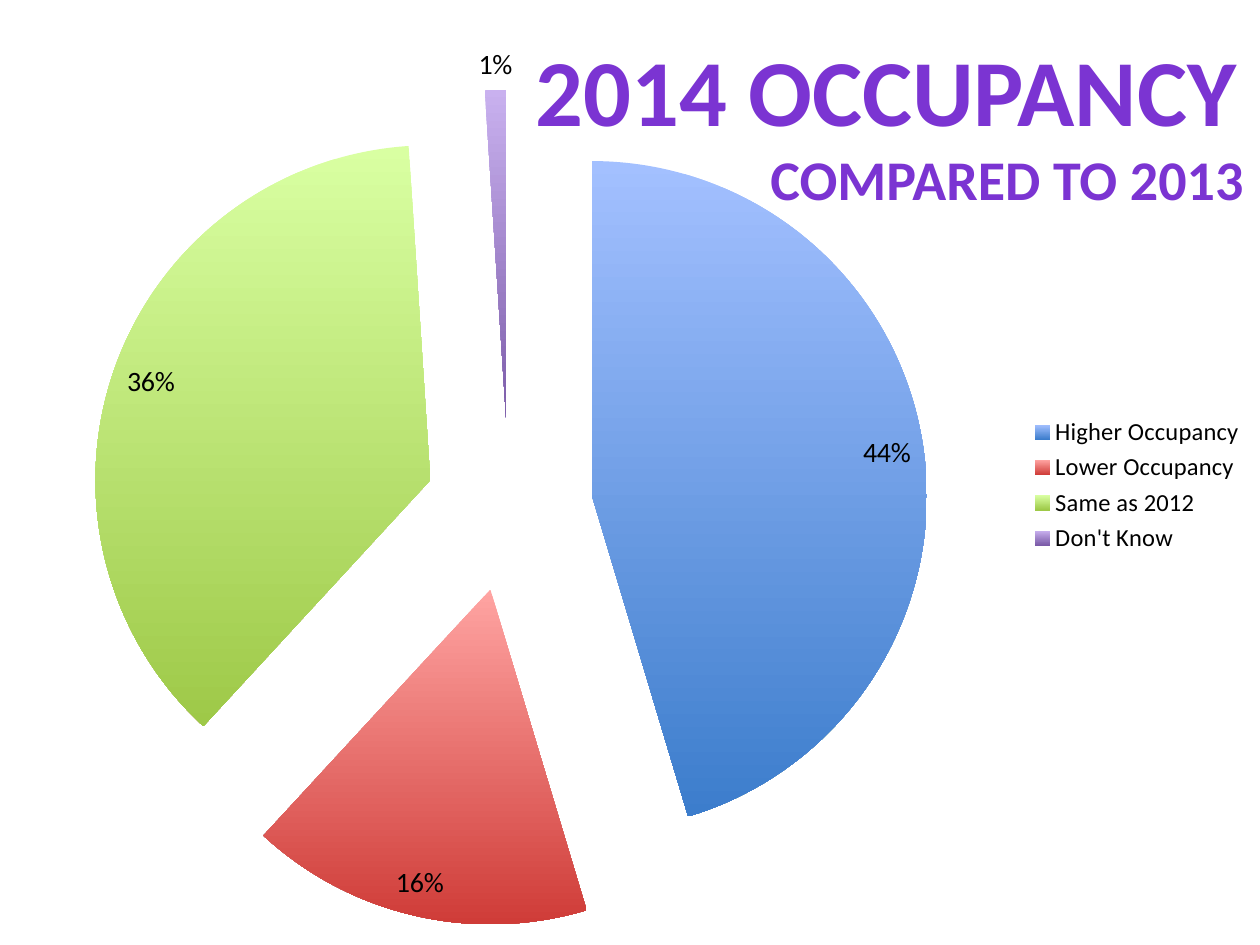
import pptx
import pptx.chart.data
import pptx.dml.color
import pptx.enum.chart
import pptx.enum.text
import pptx.oxml
import pptx.oxml.ns
import pptx.util

Pt = pptx.util.Pt
ALIGN = pptx.enum.text.PP_ALIGN
CHART = pptx.enum.chart

COLORS = {"title": "7B34D2", "text": "000000"}
# name, share, top and bottom colour of the slice
SLICES = [
    ("Higher Occupancy", 0.44, "A3C0FF", "3C7DCC"),
    ("Lower Occupancy", 0.16, "FFA4A2", "CF3C38"),
    ("Same as 2012", 0.36, "D9FFA2", "9EC948"),
    ("Don't Know", 0.01, "C9B1EF", "7B5BA8"),
]


def rgb(code):
    return pptx.dml.color.RGBColor.from_string(code)


def node(tag, inner="", val=None):
    attr = "" if val is None else f' val="{val}"'
    space = pptx.oxml.ns.nsdecls("c")
    return pptx.oxml.parse_xml(f"<c:{tag} {space}{attr}>{inner}</c:{tag}>")


class Deck:
    """Holds the style and the current slide."""

    def __init__(self, font="Calibri"):
        self.font = font
        self.show = pptx.Presentation()
        self.show.slide_width, self.show.slide_height = Pt(720), Pt(540)
        self.slide = self.show.slides.add_slide(self.show.slide_layouts[5])

    def style(self, font, size, color, bold=False):
        font.name, font.size, font.bold = self.font, Pt(size), bold
        font.color.rgb = rgb(color)

    def title(self, box, lines):
        shape = self.slide.shapes.title
        shape.left, shape.top, shape.width, shape.height = map(Pt, box)
        frame = shape.text_frame
        frame.word_wrap = True
        frame.auto_size = pptx.enum.text.MSO_AUTO_SIZE.NONE
        frame.vertical_anchor = pptx.enum.text.MSO_ANCHOR.TOP
        for i, (text, size, align) in enumerate(lines):
            para = frame.add_paragraph() if i else frame.paragraphs[0]
            para.alignment = align
            run = para.add_run()
            run.text = text
            self.style(run.font, size, COLORS["title"], True)

    def pie(self, box, slices, plot, explode):
        """Draw a pie; plot is its area as fractions of the chart."""
        data = pptx.chart.data.CategoryChartData(number_format="0%")
        data.categories = [part[0] for part in slices]
        data.add_series("Series 1", [part[1] for part in slices])
        chart = self.slide.shapes.add_chart(
            CHART.XL_CHART_TYPE.PIE, *map(Pt, box), data).chart
        chart.has_title = False
        self.style(chart.font, 10, COLORS["text"])
        chart.has_legend = True
        chart.legend.position = CHART.XL_LEGEND_POSITION.RIGHT
        chart.legend.include_in_layout = False
        self.style(chart.legend.font, 14, COLORS["text"])

        pie = chart.plots[0]
        pie.vary_by_categories = True
        series = pie.series[0]
        for i, (_, _, top, bottom) in enumerate(slices):
            form = series.points[i].format
            form.line.fill.background()
            form.fill.gradient()
            form.fill.gradient_angle = 270
            for stop, color in zip(form.fill.gradient_stops, (top, bottom)):
                stop.color.rgb = rgb(color)
        first = series._element.find(pptx.oxml.ns.qn("c:dPt"))
        first.addprevious(node("explosion", val=explode))

        labels = series.data_labels
        labels.show_value = True
        labels.number_format = "0%"
        labels.number_format_is_linked = False
        labels.position = CHART.XL_LABEL_POSITION.BEST_FIT
        self.style(labels.font, 16, COLORS["text"])
        self.place(chart, plot)

    def place(self, chart, plot):
        """Fix the inner plot area of a chart."""
        parts = '<c:layoutTarget val="inner"/>'
        parts += '<c:xMode val="edge"/><c:yMode val="edge"/>'
        parts += "".join(f'<c:{k} val="{v}"/>' for k, v in zip("xywh", plot))
        area = chart._chartSpace.chart.plotArea
        for old in area.findall(pptx.oxml.ns.qn("c:layout")):
            area.remove(old)
        area.insert(0, node("layout", f"<c:manualLayout>{parts}</c:manualLayout>"))


def main():
    deck = Deck()
    deck.title((295, 14.4, 423, 111.6), [
        ("2014 OCCUPANCY", 54, ALIGN.CENTER),
        ("COMPARED TO 2013", 32, ALIGN.RIGHT),
    ])
    deck.pie((0, 14.4, 718.5, 525.6), SLICES, (0.07, 0.07, 0.67, 0.91), 25)
    deck.show.save("out.pptx")


if __name__ == "__main__":
    main()
